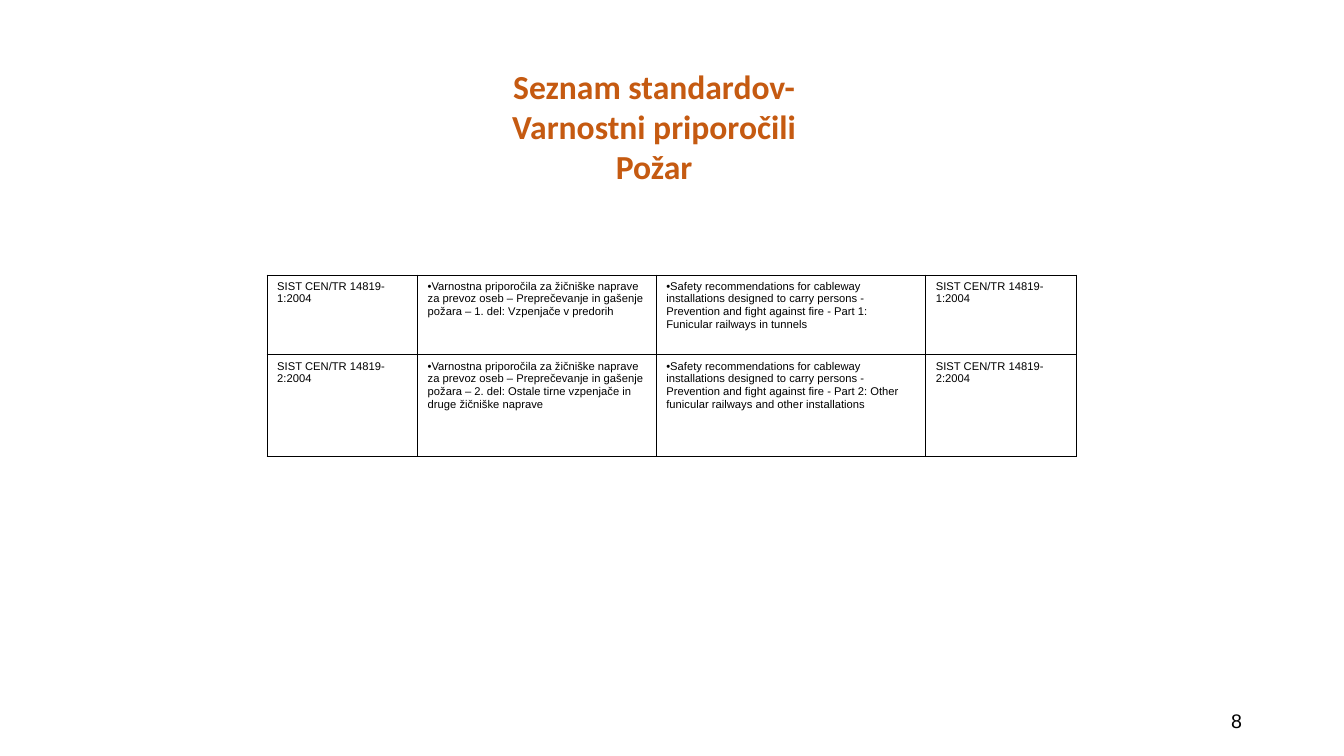
import pptx
import pptx.dml.color
import pptx.enum.text
import pptx.oxml
import pptx.oxml.ns
import pptx.util

Pt = pptx.util.Pt
ALIGN = pptx.enum.text.PP_ALIGN
ANCHOR = pptx.enum.text.MSO_ANCHOR
COLORS = {"title": "C55A11", "text": "000000", "cell": "FFFFFF", "border": "000000"}
COLUMN_WIDTHS = [107.5, 170.5, 192.5, 107.5]
ROW_HEIGHTS = [57, 72.7]
BULLET_COLUMNS = (1, 2)
STANDARDS = [
    (
        "SIST CEN/TR 14819-1:2004",
        "Varnostna priporočila za žičniške naprave za prevoz oseb – "
        "Preprečevanje in gašenje požara – 1. del: Vzpenjače v predorih",
        "Safety recommendations for cableway installations designed to carry persons - "
        "Prevention and fight against fire - Part 1: Funicular railways in tunnels",
    ),
    (
        "SIST CEN/TR 14819-2:2004",
        "Varnostna priporočila za žičniške naprave za prevoz oseb – "
        "Preprečevanje in gašenje požara – 2. del: Ostale tirne vzpenjače in druge žičniške naprave",
        "Safety recommendations for cableway installations designed to carry persons - "
        "Prevention and fight against fire - Part 2: Other funicular railways and other installations",
    ),
]


def color(name):
    """Return the named colour as an RGB value."""
    return pptx.dml.color.RGBColor.from_string(COLORS[name])


def xml(markup):
    """Parse one element whose placeholder NS stands for the drawing namespace."""
    return pptx.oxml.parse_xml(markup.replace("NS", pptx.oxml.ns.nsdecls("a")))


def write_text(frame, text, size=8, font="Arial", fill="text", bold=False,
               align=ALIGN.LEFT, bullet=False):
    """Fill a text frame with formatted paragraphs, one for each line of text."""
    frame.text = text
    frame.word_wrap = True
    for paragraph in frame.paragraphs:
        paragraph.alignment = align
        for run in paragraph.runs:
            run.font.size = Pt(size)
            run.font.name = font
            run.font.bold = bold
            run.font.color.rgb = color(fill)
        if bullet:
            properties = paragraph._p.get_or_add_pPr()
            properties.set("marL", "0")
            properties.set("indent", "0")
            properties.append(xml('<a:buFont NS typeface="Arial"/>'))
            properties.append(xml('<a:buChar NS char="•"/>'))


def add_text_box(slide, left, top, width, height, text, anchor=ANCHOR.TOP, **text_format):
    """Add a text box with formatted text."""
    frame = slide.shapes.add_textbox(Pt(left), Pt(top), Pt(width), Pt(height)).text_frame
    frame.vertical_anchor = anchor
    write_text(frame, text, **text_format)


def style_cell(cell):
    """Give a cell its fill and a thin border on all sides."""
    properties = cell._tc.get_or_add_tcPr()
    for side in ("lnL", "lnR", "lnT", "lnB"):
        properties.append(xml(
            f'<a:{side} NS w="{Pt(1)}"><a:solidFill><a:srgbClr val="{COLORS["border"]}"/>'
            f'</a:solidFill></a:{side}>'))
    cell.fill.solid()
    cell.fill.fore_color.rgb = color("cell")


def add_standards_table(slide, left, top):
    """Add the table of standards with the code in its first and last columns."""
    table = slide.shapes.add_table(
        len(STANDARDS), len(COLUMN_WIDTHS), Pt(left), Pt(top),
        Pt(sum(COLUMN_WIDTHS)), Pt(sum(ROW_HEIGHTS))).table
    table.first_row = False
    table.horz_banding = False
    for column, width in zip(table.columns, COLUMN_WIDTHS):
        column.width = Pt(width)
    for row, height, (code, slovene, english) in zip(table.rows, ROW_HEIGHTS, STANDARDS):
        row.height = Pt(height)
        for index, (cell, text) in enumerate(zip(row.cells, (code, slovene, english, code))):
            write_text(cell.text_frame, text, bullet=index in BULLET_COLUMNS)
            style_cell(cell)


def main():
    """Build the slide and save it."""
    presentation = pptx.Presentation()
    presentation.slide_width = Pt(960)
    presentation.slide_height = Pt(540)
    slide = presentation.slides.add_slide(presentation.slide_layouts[6])
    add_text_box(slide, 678.2, 500.5, 216, 28.8, "8", anchor=ANCHOR.MIDDLE,
                 size=14, align=ALIGN.RIGHT)
    add_standards_table(slide, 190.8, 196.5)
    add_text_box(slide, 287.3, 43.2, 360, 94.3,
                 "Seznam standardov-\nVarnostni priporočili\vPožar",
                 size=24, font="Calibri", fill="title", bold=True, align=ALIGN.CENTER)
    presentation.save("out.pptx")


if __name__ == "__main__":
    main()
